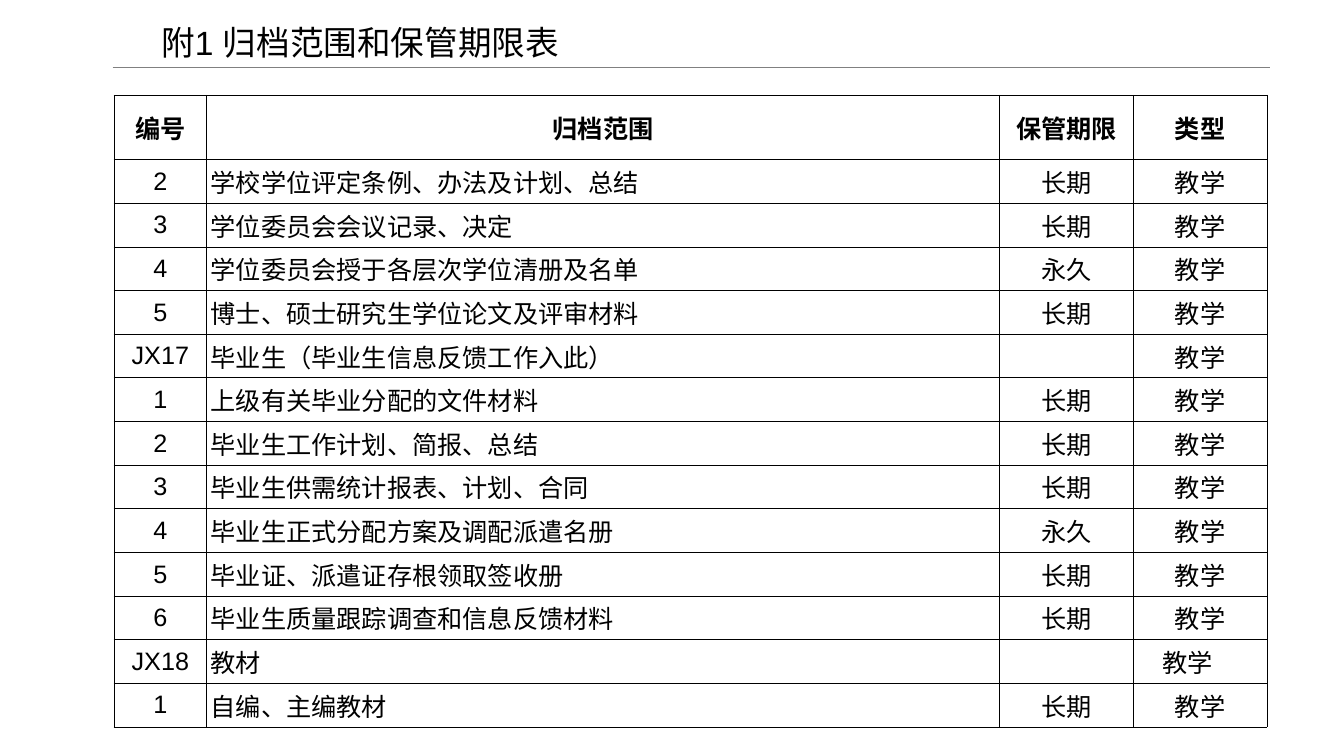
import dataclasses

import lxml.etree
import pptx
import pptx.dml.color
import pptx.enum.shapes
import pptx.enum.text
import pptx.oxml.ns
import pptx.slide
import pptx.table
import pptx.text.text
import pptx.util

Cm = pptx.util.Cm
Pt = pptx.util.Pt
ALIGN = pptx.enum.text.PP_ALIGN
MIDDLE = pptx.enum.text.MSO_ANCHOR.MIDDLE
qn = pptx.oxml.ns.qn

FONT = "Arial"
BLACK = "000000"
GREY = "808080"
HEADER_HEIGHT = 1.62
ROW_HEIGHT = 1.1


@dataclasses.dataclass(frozen=True)
class Column:
    heading: str
    width: float
    align: ALIGN = ALIGN.CENTER
    inset: float = 0


@dataclasses.dataclass(frozen=True)
class Entry:
    number: str
    scope: str
    period: str = "长期"
    category: str = "教学"
    category_inset: float = 0


COLUMNS = [
    Column("编号", 2.34),
    Column("归档范围", 19.98, ALIGN.LEFT, 0.1),
    Column("保管期限", 3.37),
    Column("类型", 3.37),
]

ENTRIES = [
    Entry("2", "学校学位评定条例、办法及计划、总结"),
    Entry("3", "学位委员会会议记录、决定"),
    Entry("4", "学位委员会授于各层次学位清册及名单", "永久"),
    Entry("5", "博士、硕士研究生学位论文及评审材料"),
    Entry("JX17", "毕业生（毕业生信息反馈工作入此）", ""),
    Entry("1", "上级有关毕业分配的文件材料"),
    Entry("2", "毕业生工作计划、简报、总结"),
    Entry("3", "毕业生供需统计报表、计划、合同"),
    Entry("4", "毕业生正式分配方案及调配派遣名册", "永久"),
    Entry("5", "毕业证、派遣证存根领取签收册"),
    Entry("6", "毕业生质量跟踪调查和信息反馈材料"),
    Entry("JX18", "教材", "", category_inset=0.64),
    Entry("1", "自编、主编教材"),
]


def colour(value: str) -> pptx.dml.color.RGBColor:
    return pptx.dml.color.RGBColor.from_string(value)


def style_paragraph(para: pptx.text.text._Paragraph, size: float,
                    align: ALIGN, bold: bool = False) -> None:
    para.alignment = align
    para.font.name = FONT
    para.font.size = Pt(size)
    para.font.bold = bold
    para.font.color.rgb = colour(BLACK)


def add_borders(cell: pptx.table._Cell) -> None:
    properties = cell._tc.get_or_add_tcPr()
    for side in ("a:lnL", "a:lnR", "a:lnT", "a:lnB"):
        border = lxml.etree.SubElement(properties, qn(side), w=str(Pt(0.5)))
        fill = lxml.etree.SubElement(border, qn("a:solidFill"))
        lxml.etree.SubElement(fill, qn("a:srgbClr"), val=BLACK)


def fill_cell(cell: pptx.table._Cell, text: str, align: ALIGN, left: float = 0,
              right: float = 0, bold: bool = False) -> None:
    add_borders(cell)
    cell.fill.background()
    cell.vertical_anchor = MIDDLE
    cell.margin_left, cell.margin_right = Cm(left), Cm(right)
    cell.margin_top = cell.margin_bottom = 0
    cell.text = text
    style_paragraph(cell.text_frame.paragraphs[0], 18, align, bold)


def add_title(page: pptx.slide.Slide, text: str) -> None:
    title = page.shapes.title
    title.left, title.top = Cm(3.81), Cm(0.36)
    title.width, title.height = Cm(28.09), Cm(1.52)
    frame = title.text_frame
    frame.text = text
    frame.auto_size = pptx.enum.text.MSO_AUTO_SIZE.NONE
    frame.vertical_anchor = MIDDLE
    para = frame.paragraphs[0]
    para.line_spacing = 0.9
    style_paragraph(para, 24, ALIGN.LEFT)


def add_rule(page: pptx.slide.Slide) -> None:
    rule = page.shapes.add_connector(
        pptx.enum.shapes.MSO_CONNECTOR.STRAIGHT,
        Cm(2.84), Cm(1.7), Cm(32), Cm(1.7))
    rule.line.color.rgb = colour(GREY)
    rule.line.width = Pt(0.75)
    lxml.etree.SubElement(rule._element.spPr, qn("a:effectLst"))


def add_archive_table(page: pptx.slide.Slide) -> None:
    width = sum(column.width for column in COLUMNS)
    height = HEADER_HEIGHT + ROW_HEIGHT * len(ENTRIES)
    table = page.shapes.add_table(
        len(ENTRIES) + 1, len(COLUMNS),
        Cm(2.87), Cm(2.4), Cm(width), Cm(height)).table
    table.horz_banding = False
    for row in table.rows:
        row.height = Cm(ROW_HEIGHT)
    table.rows[0].height = Cm(HEADER_HEIGHT)

    for index, column in enumerate(COLUMNS):
        table.columns[index].width = Cm(column.width)
        fill_cell(table.cell(0, index), column.heading, ALIGN.CENTER, bold=True)

    for row_index, entry in enumerate(ENTRIES, start=1):
        texts = (entry.number, entry.scope, entry.period, entry.category)
        right_insets = [column.inset for column in COLUMNS]
        right_insets[-1] = entry.category_inset
        for index, column in enumerate(COLUMNS):
            fill_cell(table.cell(row_index, index), texts[index], column.align,
                      column.inset, right_insets[index])


def main() -> None:
    deck = pptx.Presentation()
    deck.slide_width, deck.slide_height = Cm(33.87), Cm(19.05)
    page = deck.slides.add_slide(deck.slide_layouts.get_by_name("Title Only"))
    add_rule(page)
    add_title(page, "附1 归档范围和保管期限表")
    add_archive_table(page)
    deck.save("out.pptx")


if __name__ == "__main__":
    main()
